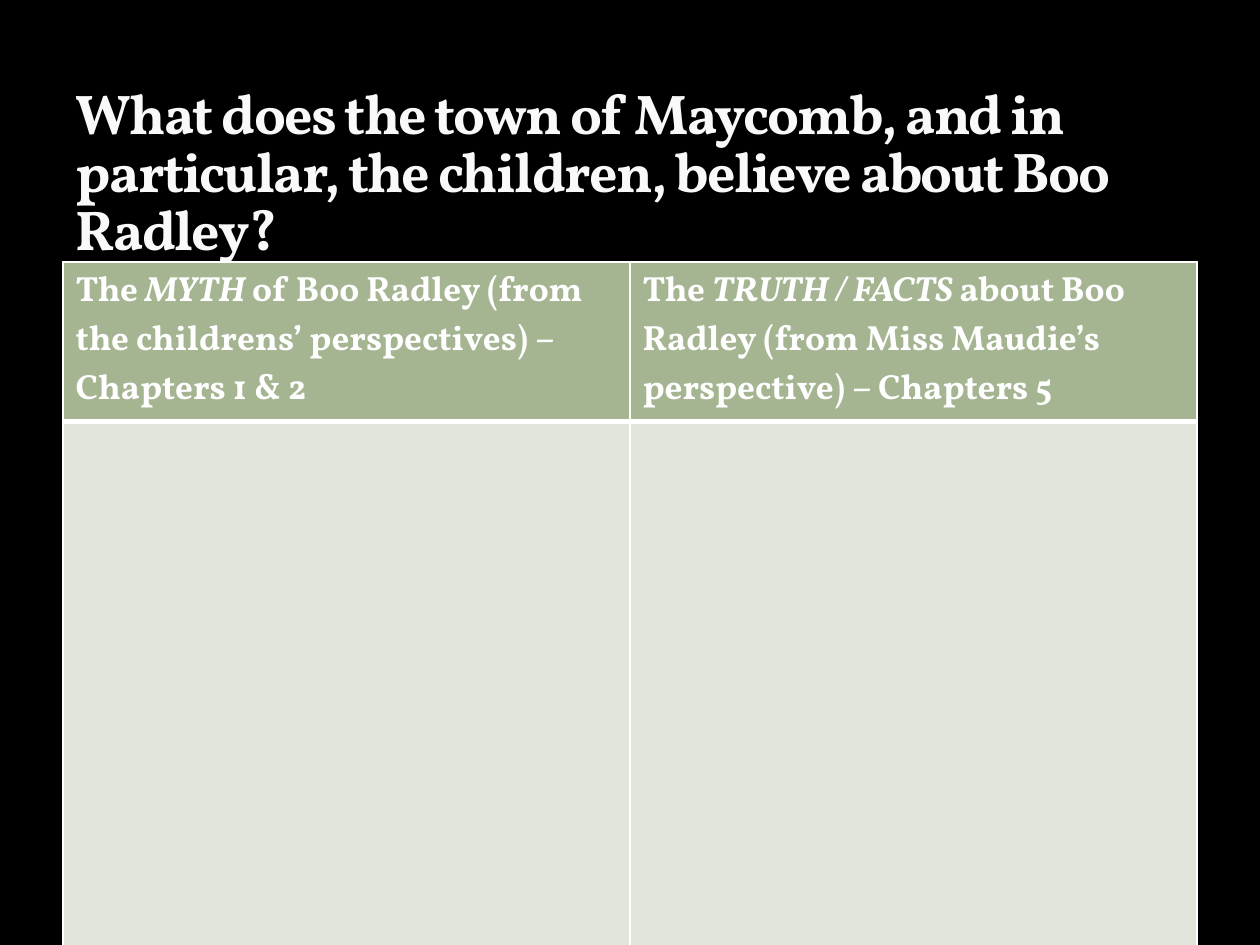
from lxml import etree
from pptx import Presentation
from pptx.dml.color import RGBColor
from pptx.enum.text import MSO_ANCHOR, MSO_AUTO_SIZE, PP_ALIGN
from pptx.oxml.ns import qn
from pptx.util import Pt

BOTTOM = MSO_ANCHOR.BOTTOM
NO_FIT = MSO_AUTO_SIZE.NONE
LEFT = PP_ALIGN.LEFT

BLACK = RGBColor(0x00, 0x00, 0x00)
WHITE = RGBColor(0xFF, 0xFF, 0xFF)
PALE = RGBColor(0xF9, 0xF9, 0xF9)
SAGE = RGBColor(0xA5, 0xB5, 0x92)
MIST = RGBColor(0xE1, 0xE5, 0xDC)

TITLE = ("What does the town of Maycomb, and in particular, "
         "the children, believe about Boo Radley?")
# Each heading: plain, italic, plain
HEADS = [
    ("The ", "MYTH ",
     "of Boo Radley (from the childrens’ perspectives) – Chapters 1 & 2"),
    ("The ", "TRUTH / FACTS ",
     "about Boo Radley (from Miss Maudie’s perspective) – Chapters 5"),
]


def px(n):
    return round(n * 914400 / 126)


class Deck:
    face = "Vollkorn"

    def __init__(self, width, height):
        self.prs = Presentation()
        self.prs.slide_width, self.prs.slide_height = px(width), px(height)
        self.slide = self.prs.slides.add_slide(self.prs.slide_layouts[5])
        fill = self.slide.background.fill
        fill.solid()
        fill.fore_color.rgb = BLACK

    def style(self, font, size, color):
        font.name, font.size, font.bold = self.face, Pt(size), True
        font.color.rgb = color

    def title(self, text, left, top, width, height):
        shape = self.slide.shapes.title
        shape.left, shape.top = px(left), px(top)
        shape.width, shape.height = px(width), px(height)
        frame = shape.text_frame
        frame.text = text
        frame.word_wrap = True
        frame.auto_size = NO_FIT
        frame.vertical_anchor = BOTTOM
        frame.margin_bottom = 0
        para = frame.paragraphs[0]
        para.alignment = LEFT
        para.line_spacing = 0.86
        self.style(para.font, 32, PALE)
        # Tighten the letters by one point
        para.runs[0].font._element.set("spc", "-100")

    def border(self, cell, sides):
        props = cell._tc.get_or_add_tcPr()
        for at, (side, width) in enumerate(sides.items()):
            line = etree.Element(qn(f"a:ln{side}"), w=str(Pt(width)))
            fill = etree.SubElement(line, qn("a:solidFill"))
            etree.SubElement(fill, qn("a:srgbClr"), val=str(WHITE))
            props.insert(at, line)

    def table(self, heads, left, top, width, rows):
        grid = self.slide.shapes.add_table(
            len(rows), len(heads), px(left), px(top), px(width),
            px(sum(rows))).table
        for row, height in zip(grid.rows, rows):
            row.height = px(height)
        for col, parts in enumerate(heads):
            head, body = grid.cell(0, col), grid.cell(1, col)
            for cell, color in ((head, SAGE), (body, MIST)):
                cell.fill.solid()
                cell.fill.fore_color.rgb = color
            self.border(head, {"L": 1, "R": 1, "T": 1, "B": 3})
            self.border(body, {"L": 1, "R": 1, "T": 3, "B": 1})
            para = head.text_frame.paragraphs[0]
            self.style(para.font, 20, WHITE)
            for at, part in enumerate(parts):
                run = para.add_run()
                run.text = part
                run.font.italic = at == 1


def main():
    deck = Deck(1260, 945)
    # Question
    deck.title(TITLE, 63, 95, 1134, 167)
    # Myth and truth columns, with room for answers
    deck.table(HEADS, 63, 262, 1134, [159, 524])
    deck.prs.save("out.pptx")


if __name__ == "__main__":
    main()
